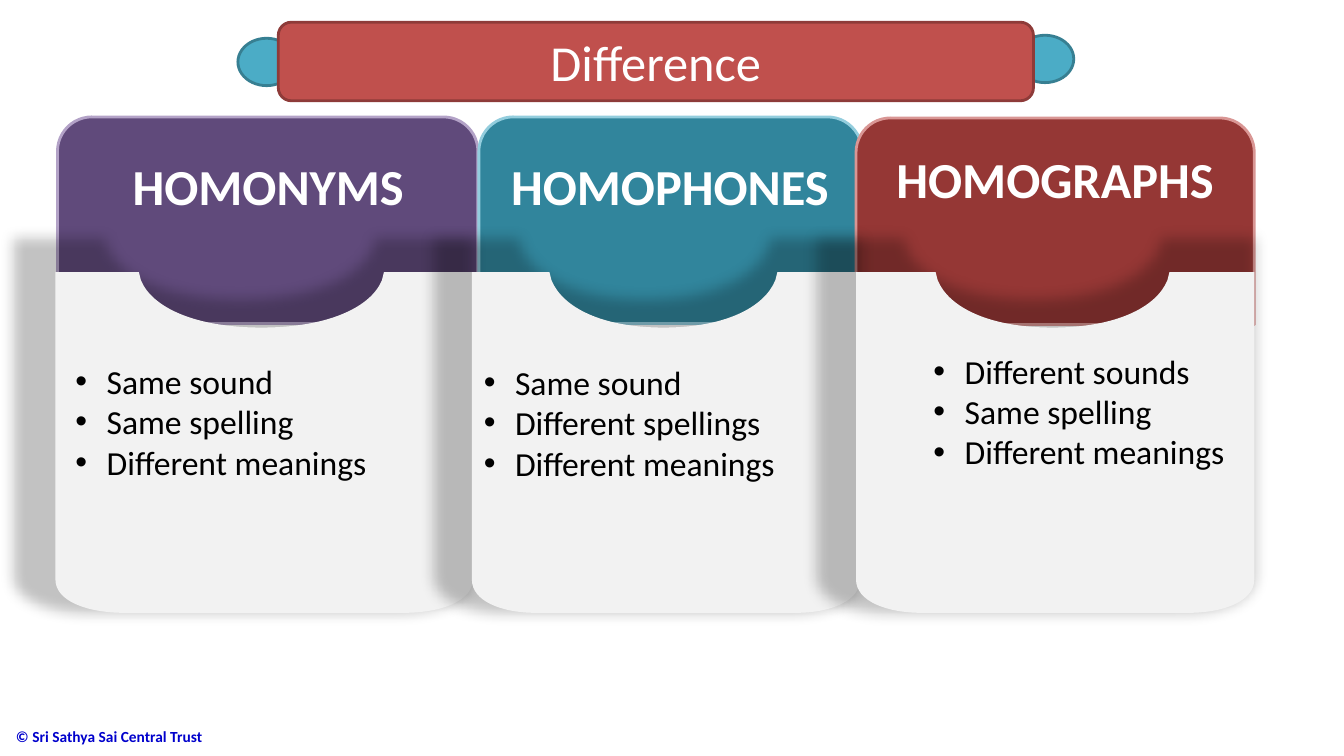
from lxml import etree
from pptx import Presentation
from pptx.dml.color import RGBColor
from pptx.enum.shapes import MSO_SHAPE
from pptx.enum.text import MSO_ANCHOR, MSO_AUTO_SIZE, PP_ALIGN
from pptx.oxml import parse_xml
from pptx.oxml.ns import nsdecls, qn
from pptx.util import Inches, Pt

ELLIPSE = MSO_SHAPE.OVAL
TAB = MSO_SHAPE.ROUND_2_SAME_RECTANGLE
BANNER = MSO_SHAPE.ROUNDED_RECTANGLE
MIDDLE, TOP = MSO_ANCHOR.MIDDLE, MSO_ANCHOR.TOP
CENTER, LEFT = PP_ALIGN.CENTER, PP_ALIGN.LEFT
NO_AUTOFIT = MSO_AUTO_SIZE.NONE

WHITE = RGBColor(0xFF, 0xFF, 0xFF)
BLACK = RGBColor(0, 0, 0)
BLUE = RGBColor(0, 0, 0xCC)
PANEL_GRAY = RGBColor(0xF2, 0xF2, 0xF2)
PURPLE, LILAC = RGBColor(0x60, 0x4A, 0x7B), RGBColor(0xB3, 0xA2, 0xC7)
TEAL, AQUA = RGBColor(0x31, 0x85, 0x9C), RGBColor(0x93, 0xCD, 0xDD)
MAROON, PINK = RGBColor(0x95, 0x37, 0x35), RGBColor(0xD9, 0x96, 0x94)
RED, DARK_RED = RGBColor(0xC0, 0x50, 0x4D), RGBColor(0x8E, 0x3B, 0x39)
CYAN, DARK_CYAN = RGBColor(0x4B, 0xAC, 0xC6), RGBColor(0x37, 0x7F, 0x92)

HEADLINE = "Difference"
COPYRIGHT = "© Sri Sathya Sai Central Trust"
BANNER_BOX = (2.76, 0.22, 7.49, 0.78)
KNOBS = [(10.08, 0.35, 0.57, 0.47), (2.36, 0.38, 0.57, 0.47)]
CARDS = [
    {"heading": "HOMONYMS", "fill": PURPLE, "line": LILAC,
     "tab": (0.57, 1.16, 4.17, 2.05), "heading_box": (1.2, 1.49, 2.92, 0.71),
     "panel": (0.55, 4.14), "list_box": (0.65, 3.53, 4.17, 1.31),
     "points": ["Same sound", "Same spelling", "Different meanings"]},
    {"heading": "HOMOPHONES", "fill": TEAL, "line": AQUA,
     "tab": (4.75, 1.16, 3.8, 2.05), "heading_box": (4.95, 1.49, 3.39, 0.71),
     "panel": (4.68, 3.85), "list_box": (4.7, 3.54, 4.17, 1.31),
     "points": ["Same sound", "Different spellings", "Different meanings"]},
    {"heading": "HOMOGRAPHS", "fill": MAROON, "line": PINK,
     "tab": (8.49, 1.17, 3.95, 2.05), "heading_box": (8.77, 1.42, 3.39, 0.71),
     "panel": (8.49, 3.95), "list_box": (9.16, 3.43, 4.17, 1.31),
     "points": ["Different sounds", "Same spelling", "Different meanings"]},
]
PANEL_TOP, PANEL_HEIGHT = 2.7, 3.38
NOTCH_SHOULDER, NOTCH_DEPTH, CORNER_HEIGHT = 0.08, 0.55, 0.33


def inches(box):
    return [Inches(value) for value in box]


def write(frame, lines, size, color, bold=False, align=LEFT, anchor=TOP,
          wrap=True, bullets=False):
    frame.auto_size = NO_AUTOFIT
    frame.word_wrap = wrap
    frame.vertical_anchor = anchor
    for index, line in enumerate(lines):
        paragraph = frame.paragraphs[0] if index == 0 else frame.add_paragraph()
        paragraph.alignment = align
        if bullets:
            properties = paragraph._p.get_or_add_pPr()
            properties.set("marL", str(Inches(0.31)))
            properties.set("indent", str(Inches(-0.31)))
            etree.SubElement(properties, qn("a:buFont")).set("typeface", "Arial")
            etree.SubElement(properties, qn("a:buChar")).set("char", "•")
        run = paragraph.add_run()
        run.text = line
        run.font.name = "Calibri"
        run.font.size = Pt(size)
        run.font.bold = bold
        run.font.color.rgb = color


def add_filled(slide, kind, box, fill, line):
    shape = slide.shapes.add_shape(kind, *inches(box))
    shape.shadow.inherit = False
    shape.fill.solid()
    shape.fill.fore_color.rgb = fill
    shape.line.color.rgb = line
    shape.line.width = Pt(2)
    return shape


def add_text(slide, box, lines, **style):
    write(slide.shapes.add_textbox(*inches(box)).text_frame, lines, **style)


def bend(segment, controls):
    curve = etree.Element(qn("a:cubicBezTo"))
    for x, y in controls:
        point = etree.SubElement(curve, qn("a:pt"))
        point.set("x", str(Inches(x)))
        point.set("y", str(Inches(y)))
    curve.append(segment[0])
    segment.getparent().replace(segment, curve)


def add_panel(slide, left, width):
    notch_left, notch_right = 0.2 * width, 0.787 * width
    shoulder_left, shoulder_right = notch_left + 0.02, notch_right - 0.02
    middle = (notch_left + notch_right) / 2
    pull = 0.27 * (notch_right - notch_left)
    corner_width = width / 6
    corner_y = PANEL_HEIGHT - CORNER_HEIGHT
    flat_x, flat_y = 0.45 * corner_width, PANEL_HEIGHT - 0.45 * CORNER_HEIGHT
    anchors = [
        (0, 0), (notch_left, 0), (shoulder_left, NOTCH_SHOULDER),
        (middle, NOTCH_DEPTH), (shoulder_right, NOTCH_SHOULDER),
        (notch_right, 0), (width, 0), (width, corner_y),
        (width - corner_width, PANEL_HEIGHT), (corner_width, PANEL_HEIGHT),
        (0, corner_y),
    ]
    curves = {
        2: [(shoulder_left + 0.11, 0.35), (middle - pull, NOTCH_DEPTH)],
        3: [(middle + pull, NOTCH_DEPTH), (shoulder_right - 0.11, 0.35)],
        7: [(width, flat_y + 0.03), (width - flat_x, PANEL_HEIGHT)],
        9: [(flat_x, PANEL_HEIGHT), (0, flat_y + 0.03)],
    }
    outline = [tuple(inches((left + x, PANEL_TOP + y))) for x, y in anchors]
    builder = slide.shapes.build_freeform(*outline[0])
    builder.add_line_segments(outline[1:], close=True)
    panel = builder.convert_to_shape()
    segments = list(panel._element.spPr.iter(qn("a:lnTo")))
    for index, controls in curves.items():
        bend(segments[index], controls)
    panel.fill.solid()
    panel.fill.fore_color.rgb = PANEL_GRAY
    panel.line.fill.background()
    panel._element.spPr.append(parse_xml(
        f'<a:effectLst {nsdecls("a")}><a:outerShdw blurRad="{Pt(10)}" dist="0" '
        'dir="5400000" sx="110000" sy="110000" algn="br" rotWithShape="0">'
        '<a:srgbClr val="000000"><a:alpha val="23000"/></a:srgbClr>'
        '</a:outerShdw></a:effectLst>'))


def main():
    presentation = Presentation()
    presentation.slide_width = Inches(13.33)
    presentation.slide_height = Inches(7.5)
    slide = presentation.slides.add_slide(presentation.slide_layouts[6])
    add_text(slide, (0.06, 7.1, 3.53, 0.41), [COPYRIGHT],
             size=11, color=BLUE, bold=True, anchor=MIDDLE)
    for card in CARDS:
        add_filled(slide, TAB, card["tab"], card["fill"], card["line"])
        add_text(slide, card["heading_box"], [card["heading"]],
                 size=36, color=WHITE, bold=True, align=CENTER, wrap=False)
    for card in CARDS:
        add_panel(slide, *card["panel"])
    for card in CARDS:
        add_text(slide, card["list_box"], card["points"],
                 size=24, color=BLACK, bullets=True)
    for knob in KNOBS:
        add_filled(slide, ELLIPSE, knob, CYAN, DARK_CYAN)
    banner = add_filled(slide, BANNER, BANNER_BOX, RED, DARK_RED)
    write(banner.text_frame, [HEADLINE], size=36, color=WHITE,
          align=CENTER, anchor=MIDDLE)
    presentation.save("out.pptx")


if __name__ == "__main__":
    main()
